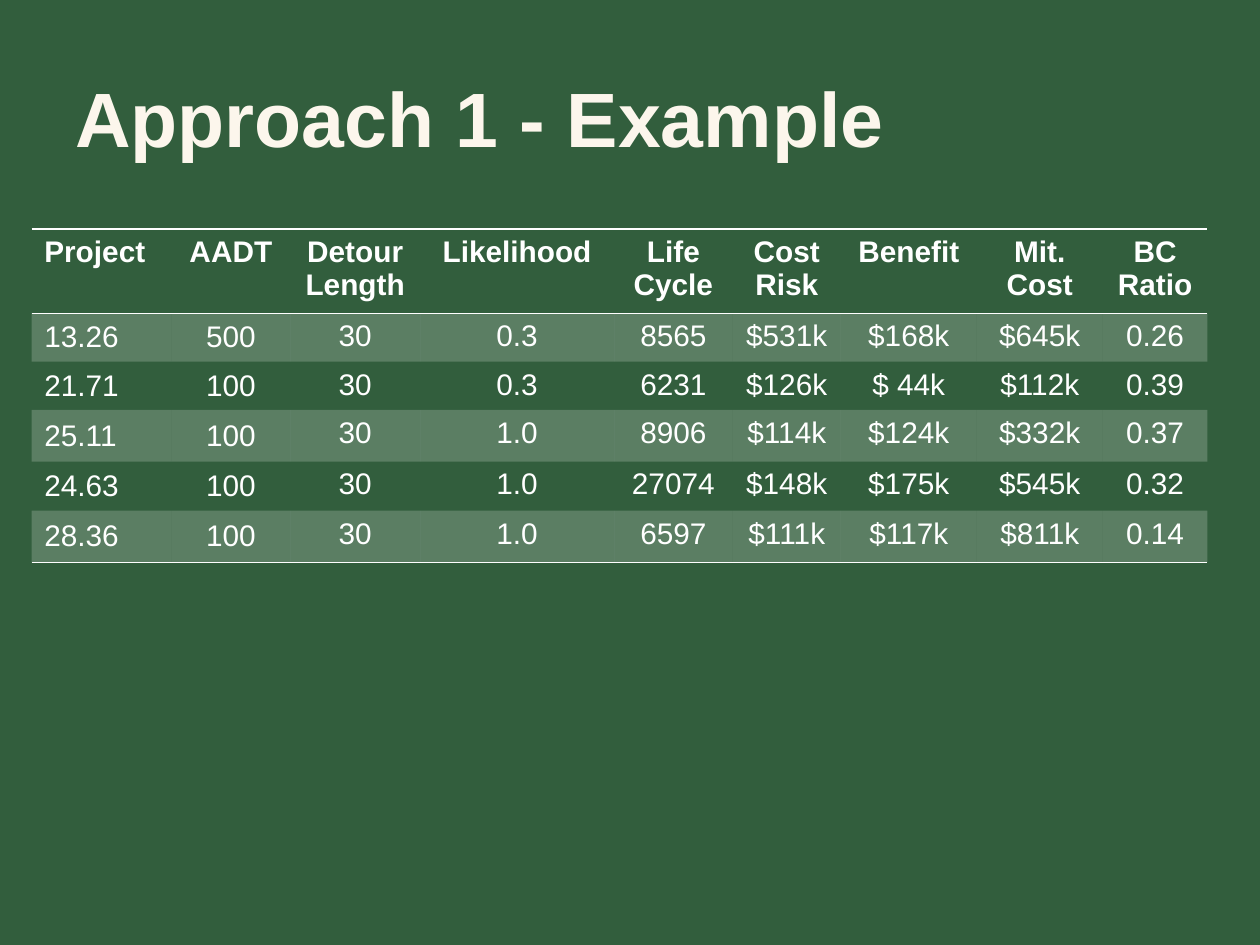
"""Build the slide with the benefit-cost table for Approach 1."""
from lxml import etree
from pptx import Presentation
from pptx.dml.color import RGBColor
from pptx.enum.text import MSO_ANCHOR, PP_ALIGN
from pptx.oxml.ns import qn
from pptx.util import Cm, Pt

LEFT, CENTER = PP_ALIGN.LEFT, PP_ALIGN.CENTER
TOP, MIDDLE = MSO_ANCHOR.TOP, MSO_ANCHOR.MIDDLE

FONT = "Arial"
GREEN, CREAM, WHITE = "325E3D", "FCF6EC", "FFFFFF"
BAND_OPACITY = 20
PLAIN_TABLE_STYLE = "{2D5ABB26-0587-4C30-8999-92F81FD0307C}"

TITLE = "Approach 1 - Example"
ROWS = [
    ("Project", "AADT", "Detour Length", "Likelihood", "Life Cycle",
     "Cost Risk", "Benefit", "Mit. Cost", "BC Ratio"),
    ("13.26", "500", "30", "0.3", "8565", "$531k", "$168k", "$645k", "0.26"),
    ("21.71", "100", "30", "0.3", "6231", "$126k", "$ 44k", "$112k", "0.39"),
    ("25.11", "100", "30", "1.0", "8906", "$114k", "$124k", "$332k", "0.37"),
    ("24.63", "100", "30", "1.0", "27074", "$148k", "$175k", "$545k", "0.32"),
    ("28.36", "100", "30", "1.0", "6597", "$111k", "$117k", "$811k", "0.14"),
]
COLUMN_WIDTHS = (2.82, 2.39, 2.62, 3.91, 2.39, 2.18, 2.74, 2.54, 2.11)
ROW_HEIGHTS = (1.6, 0.97, 0.97, 1.04, 0.99, 1.04)


def color(value):
    return RGBColor.from_string(value)


def write(text_frame, text, size, text_color, bold, alignment=LEFT):
    text_frame.text = text
    paragraph = text_frame.paragraphs[0]
    paragraph.alignment = alignment
    font = paragraph.runs[0].font
    font.name, font.size, font.bold = FONT, Pt(size), bold
    font.color.rgb = color(text_color)


def add_border(cell, side):
    properties = cell._tc.get_or_add_tcPr()
    line = etree.SubElement(properties, qn(f"a:{side}"), w=str(Pt(1)))
    fill = etree.SubElement(line, qn("a:solidFill"))
    etree.SubElement(fill, qn("a:srgbClr"), val=WHITE)


def fill_band(cell):
    cell.fill.solid()
    cell.fill.fore_color.rgb = color(WHITE)
    band = cell._tc.tcPr.find(f"{qn('a:solidFill')}/{qn('a:srgbClr')}")
    etree.SubElement(band, qn("a:alpha"), val=str(BAND_OPACITY * 1000))


def format_cell(cell, text, row, column):
    header = row == 0
    write(cell.text_frame, text, 17, WHITE, header, CENTER if column else LEFT)
    cell.vertical_anchor = MIDDLE if column < 2 and not header else TOP
    if column == 1 and not header:
        cell.margin_left = cell.margin_right = Cm(0)
        cell.margin_top = cell.margin_bottom = Cm(0)
    if header:
        add_border(cell, "lnT")
    if row in (0, len(ROWS) - 1):
        add_border(cell, "lnB")
    if row % 2:
        fill_band(cell)
    else:
        cell.fill.background()


def add_title(slide):
    title = slide.shapes.add_textbox(Cm(1.27), Cm(0.76), Cm(22.86), Cm(3.18))
    title.text_frame.word_wrap = True
    title.text_frame.vertical_anchor = MIDDLE
    write(title.text_frame, TITLE, 44, CREAM, True)


def add_project_table(slide):
    shape = slide.shapes.add_table(
        len(ROWS), len(COLUMN_WIDTHS), Cm(0.64), Cm(4.62),
        Cm(sum(COLUMN_WIDTHS)), Cm(sum(ROW_HEIGHTS)))
    table = shape.table
    table.horz_banding = False
    table._tbl.tblPr.find(qn("a:tableStyleId")).text = PLAIN_TABLE_STYLE
    for column, width in zip(table.columns, COLUMN_WIDTHS):
        column.width = Cm(width)
    for row, height in zip(table.rows, ROW_HEIGHTS):
        row.height = Cm(height)
    for row, values in enumerate(ROWS):
        for column, text in enumerate(values):
            format_cell(table.cell(row, column), text, row, column)


def main():
    presentation = Presentation()
    presentation.slide_width, presentation.slide_height = Cm(25.4), Cm(19.05)
    slide = presentation.slides.add_slide(presentation.slide_layouts[6])
    slide.background.fill.solid()
    slide.background.fill.fore_color.rgb = color(GREEN)
    add_title(slide)
    add_project_table(slide)
    presentation.save("out.pptx")


if __name__ == "__main__":
    main()
